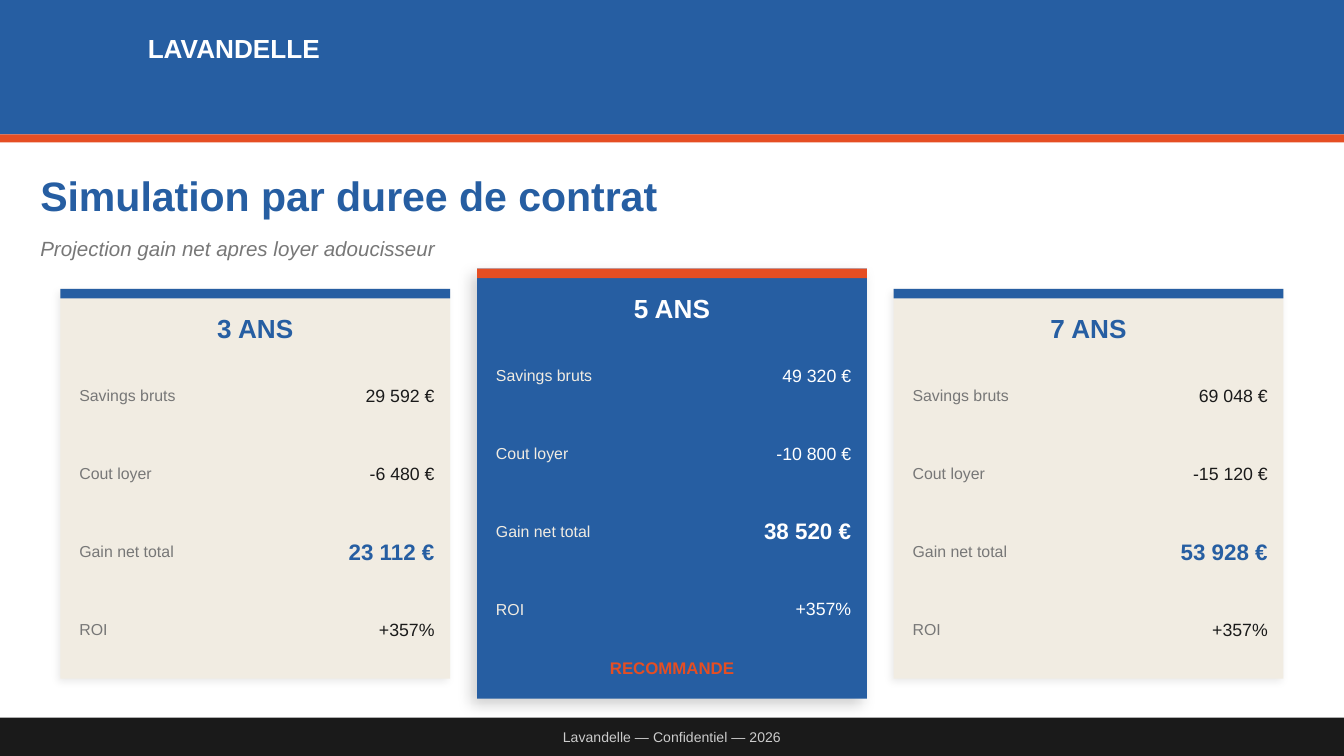
"""Build the slide that compares contract durations in three cards."""

import dataclasses
import typing

import lxml.etree
import pptx
import pptx.dml.color
import pptx.enum.shapes
import pptx.enum.text
import pptx.oxml.ns
import pptx.util

Pt = pptx.util.Pt
Align = pptx.enum.text.PP_ALIGN


@dataclasses.dataclass(frozen=True)
class Theme:
    font: str = "Arial"
    blue: str = "265EA2"
    orange: str = "E54E23"
    cream: str = "F1ECE2"
    white: str = "FFFFFF"
    black: str = "1A1A1A"
    grey: str = "777777"
    silver: str = "CCCCCC"
    title_size: float = 22
    heading_size: float = 14
    total_size: float = 12
    subtitle_size: float = 11
    value_size: float = 9.5
    badge_size: float = 9
    label_size: float = 8.5
    footer_size: float = 7.5


THEME = Theme()


class Area(typing.NamedTuple):
    left: float
    top: float
    width: float
    height: float


class Style(typing.NamedTuple):
    size: float
    color: str
    bold: bool = False
    italic: bool = False
    align: Align = Align.LEFT


class Shadow(typing.NamedTuple):
    opacity: int
    blur: float
    distance: float


@dataclasses.dataclass(frozen=True)
class CardLook:
    top: float
    height: float
    fill: str
    accent: str
    heading: str
    label: str
    value: str
    shadow: Shadow


@dataclasses.dataclass(frozen=True)
class Card:
    heading: str
    values: tuple[str, ...]
    look: CardLook
    badge: str = ""


PLAIN = CardLook(154.8, 208.8, THEME.cream, THEME.blue, THEME.blue,
                 THEME.grey, THEME.black, Shadow(8, 4, 2))
FEATURED = CardLook(144, 230.4, THEME.blue, THEME.orange, THEME.white,
                    THEME.cream, THEME.white, Shadow(18, 8, 4))
LABELS = ("Savings bruts", "Cout loyer", "Gain net total", "ROI")
TOTAL_ROW = 2
CARDS = (
    Card("3 ANS", ("29 592 €", "-6 480 €", "23 112 €", "+357%"), PLAIN),
    Card("5 ANS", ("49 320 €", "-10 800 €", "38 520 €", "+357%"), FEATURED, "RECOMMANDE"),
    Card("7 ANS", ("69 048 €", "-15 120 €", "53 928 €", "+357%"), PLAIN),
)
PAGE_WIDTH, PAGE_HEIGHT = 720, 405
CARD_LEFT, CARD_WIDTH, CARD_STEP = 32.4, 208.8, 223.2
ROW_STEP, ROW_HEIGHT = 41.76, 30.24


def set_values(target: typing.Any, values: dict[str, typing.Any]) -> None:
    """Set every named value on the target."""
    for name, value in values.items():
        setattr(target, name, value)


def add_shadow(shape: typing.Any, shadow: Shadow) -> None:
    """Give a shape a soft shadow to the lower left."""
    qn = pptx.oxml.ns.qn
    effects = shape._element.spPr.find(qn("a:effectLst"))
    outer = lxml.etree.SubElement(effects, qn("a:outerShdw"), {
        "blurRad": str(Pt(shadow.blur)), "dist": str(Pt(shadow.distance)),
        "dir": str(135 * 60000), "algn": "bl", "rotWithShape": "0"})
    color = lxml.etree.SubElement(outer, qn("a:srgbClr"), val="000000")
    lxml.etree.SubElement(color, qn("a:alpha"), val=str(shadow.opacity * 1000))


def add_block(page: typing.Any, area: Area, fill: str) -> typing.Any:
    """Draw a filled rectangle without outline or shadow."""
    shape = page.shapes.add_shape(pptx.enum.shapes.MSO_SHAPE.RECTANGLE, *map(Pt, area))
    shape.shadow.inherit = False
    shape.fill.solid()
    shape.fill.fore_color.rgb = pptx.dml.color.RGBColor.from_string(fill)
    shape.line.fill.background()
    return shape


def write_text(box: typing.Any, text: str, style: Style) -> None:
    """Write one formatted paragraph, centred vertically in its box."""
    frame = box.text_frame
    set_values(frame, {
        "word_wrap": True, "auto_size": pptx.enum.text.MSO_AUTO_SIZE.NONE,
        "vertical_anchor": pptx.enum.text.MSO_ANCHOR.MIDDLE,
        "margin_left": 0, "margin_top": 0, "margin_right": 0, "margin_bottom": 0})
    para = frame.paragraphs[0]
    para.alignment = style.align
    span = para.add_run()
    span.text = text
    set_values(span.font, {"name": THEME.font, "size": Pt(style.size),
                           "bold": style.bold, "italic": style.italic})
    span.font.color.rgb = pptx.dml.color.RGBColor.from_string(style.color)


def add_text(page: typing.Any, area: Area, text: str, style: Style) -> None:
    """Add a text box."""
    write_text(page.shapes.add_textbox(*map(Pt, area)), text, style)


def add_title(page: typing.Any, area: Area, text: str, style: Style) -> None:
    """Place and write the title placeholder."""
    title = page.shapes.title
    set_values(title, dict(zip(area._fields, map(Pt, area))))
    write_text(title, text, style)


def add_card(page: typing.Any, card: Card, left: float) -> None:
    """Draw a duration card with its rows of figures."""
    look = card.look
    panel = add_block(page, Area(left, look.top, CARD_WIDTH, look.height), look.fill)
    add_shadow(panel, look.shadow)
    add_block(page, Area(left, look.top, CARD_WIDTH, 5.04), look.accent)
    add_text(page, Area(left, look.top + 7.2, CARD_WIDTH, 27.36), card.heading,
             Style(THEME.heading_size, look.heading, bold=True, align=Align.CENTER))
    for row, (label, value) in enumerate(zip(LABELS, card.values)):
        top = look.top + (row + 1) * ROW_STEP
        total = row == TOTAL_ROW
        add_text(page, Area(left + 10.08, top, 108.72, ROW_HEIGHT), label,
                 Style(THEME.label_size, look.label))
        add_text(page, Area(left + 104.4, top, 96, ROW_HEIGHT), value,
                 Style(THEME.total_size if total else THEME.value_size,
                       look.heading if total else look.value,
                       bold=total, align=Align.RIGHT))
    if card.badge:
        add_text(page, Area(left, look.top + 200.16, CARD_WIDTH, 27.36), card.badge,
                 Style(THEME.badge_size, THEME.orange, bold=True, align=Align.CENTER))


def main() -> None:
    """Build and save the deck."""
    deck = pptx.Presentation()
    set_values(deck, {"slide_width": Pt(PAGE_WIDTH), "slide_height": Pt(PAGE_HEIGHT)})
    page = deck.slides.add_slide(deck.slide_layouts.get_by_name("Title Only"))
    add_block(page, Area(0, 0, PAGE_WIDTH, 72), THEME.blue)
    add_block(page, Area(0, 72, PAGE_WIDTH, 4.32), THEME.orange)
    add_text(page, Area(79.2, 12.96, 180, 25.92), "LAVANDELLE",
             Style(THEME.heading_size, THEME.white, bold=True))
    add_title(page, Area(21.6, 84.96, 676.8, 39.6), "Simulation par duree de contrat",
              Style(THEME.title_size, THEME.blue, bold=True))
    add_text(page, Area(21.6, 122.4, 676.8, 21.6),
             "Projection gain net apres loyer adoucisseur",
             Style(THEME.subtitle_size, THEME.grey, italic=True))
    for index, card in enumerate(CARDS):
        add_card(page, card, CARD_LEFT + index * CARD_STEP)
    add_block(page, Area(0, 384.48, PAGE_WIDTH, PAGE_HEIGHT - 384.48), THEME.black)
    add_text(page, Area(21.6, 384.48, 676.8, 20.16), "Lavandelle — Confidentiel — 2026",
             Style(THEME.footer_size, THEME.silver, align=Align.CENTER))
    deck.save("out.pptx")


if __name__ == "__main__":
    main()
